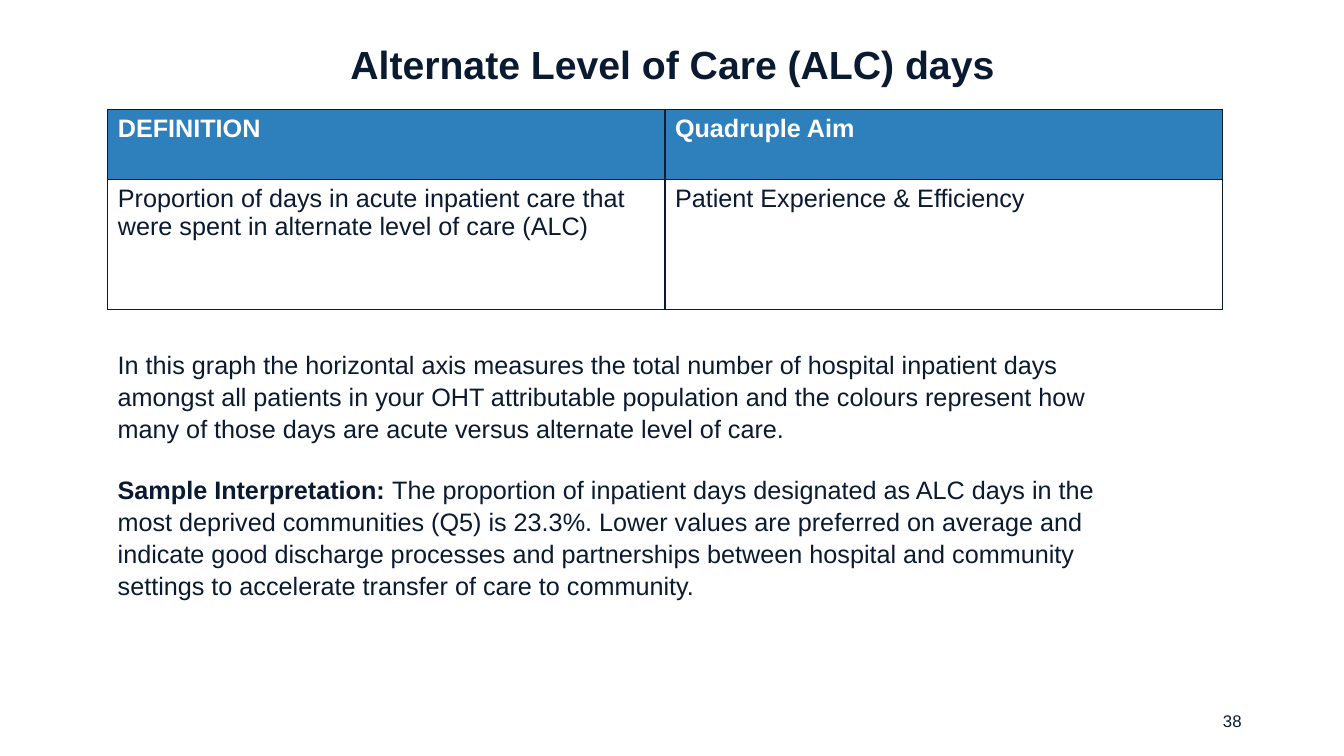
"""Builds the slide that defines Alternate Level of Care days."""
from dataclasses import dataclass

from lxml import etree
from pptx import Presentation
from pptx.dml.color import RGBColor
from pptx.enum import text
from pptx.oxml import ns
from pptx.util import Pt

TITLE = "Alternate Level of Care (ALC) days"
PAGE = "38"
ROWS = [
    ("DEFINITION", "Quadruple Aim"),
    ("Proportion of days in acute inpatient care that were spent in "
     "alternate level of care (ALC)", "Patient Experience & Efficiency"),
]
GRAPH_NOTE = (
    "In this graph the horizontal axis measures the total number of hospital "
    "inpatient days amongst all patients in your OHT attributable population "
    "and the colours represent how many of those days are acute versus "
    "alternate level of care.")
SAMPLE_LABEL = "Sample Interpretation: "
SAMPLE = (
    "The proportion of inpatient days designated as ALC days in the most "
    "deprived communities (Q5) is 23.3%. Lower values are preferred on average "
    "and indicate good discharge processes and partnerships between hospital "
    "and community settings to accelerate transfer of care to community.")


@dataclass(frozen=True)
class Theme:
    """Colours, font and type sizes."""
    font: str = "Arial"
    ink: str = "0A1A31"
    header: str = "2E80BD"
    white: str = "FFFFFF"
    title: int = 28
    body: int = 18
    page: int = 12


T = Theme()
SLIDE = (960, 540)
TITLE_BOX = (55.5, 17.5, 849.5, 60.5)
TABLE_BOX = (77, 78, 796, 143)
ROW_HEIGHTS = (50, 93)
NOTES_BOX = (77, 245, 743, 181.5)
PAGE_BOX = (678, 500.5, 216, 28.5)


def write(p, words, size=T.body, color=T.ink, bold=False, align=None):
    """Adds a formatted run to a paragraph."""
    r = p.add_run()
    r.text = words
    r.font.name, r.font.size, r.font.bold = T.font, Pt(size), bold
    r.font.color.rgb = RGBColor.from_string(color)
    if align is not None:
        p.alignment = align


def add_box(slide, box):
    """Adds a wrapping text box and returns its text frame."""
    tf = slide.shapes.add_textbox(*map(Pt, box)).text_frame
    tf.word_wrap = True
    return tf


def add_borders(cell):
    """Draws a thin line on each side of a table cell."""
    props = cell._tc.get_or_add_tcPr()
    for i, side in enumerate(("lnL", "lnR", "lnT", "lnB")):
        ln = etree.Element(ns.qn("a:" + side), w=str(Pt(1)))
        fill = etree.SubElement(ln, ns.qn("a:solidFill"))
        etree.SubElement(fill, ns.qn("a:srgbClr"), val=T.ink)
        props.insert(i, ln)


def add_title(slide):
    """Places and writes the title."""
    sp = slide.shapes.title
    sp.left, sp.top, sp.width, sp.height = map(Pt, TITLE_BOX)
    tf = sp.text_frame
    tf.vertical_anchor = text.MSO_ANCHOR.MIDDLE
    p = tf.paragraphs[0]
    p.line_spacing = 0.9
    write(p, TITLE, size=T.title, bold=True, align=text.PP_ALIGN.CENTER)


def add_definition(slide):
    """Adds the definition table."""
    table = slide.shapes.add_table(len(ROWS), len(ROWS[0]), *map(Pt, TABLE_BOX)).table
    for i, (row, height) in enumerate(zip(ROWS, ROW_HEIGHTS)):
        table.rows[i].height = Pt(height)
        head = i == 0
        for j, words in enumerate(row):
            cell = table.cell(i, j)
            cell.fill.solid()
            cell.fill.fore_color.rgb = RGBColor.from_string(T.header if head else T.white)
            add_borders(cell)
            write(cell.text_frame.paragraphs[0], words,
                  color=T.white if head else T.ink, bold=head)


def add_notes(slide):
    """Adds the reading guide and the sample interpretation."""
    tf = add_box(slide, NOTES_BOX)
    write(tf.paragraphs[0], GRAPH_NOTE)
    sample = tf.add_paragraph()
    sample.space_before = Pt(21.5)
    write(sample, SAMPLE_LABEL, bold=True)
    write(sample, SAMPLE)
    for p in tf.paragraphs:
        p.line_spacing = 1.05


def add_page_number(slide):
    """Adds the page number."""
    tf = add_box(slide, PAGE_BOX)
    tf.vertical_anchor = text.MSO_ANCHOR.MIDDLE
    write(tf.paragraphs[0], PAGE, size=T.page, align=text.PP_ALIGN.RIGHT)


def main():
    """Builds and saves the slide."""
    prs = Presentation()
    prs.slide_width, prs.slide_height = map(Pt, SLIDE)
    slide = prs.slides.add_slide(prs.slide_layouts[5])
    for add_part in (add_title, add_definition, add_notes, add_page_number):
        add_part(slide)
    prs.save("out.pptx")


if __name__ == "__main__":
    main()
